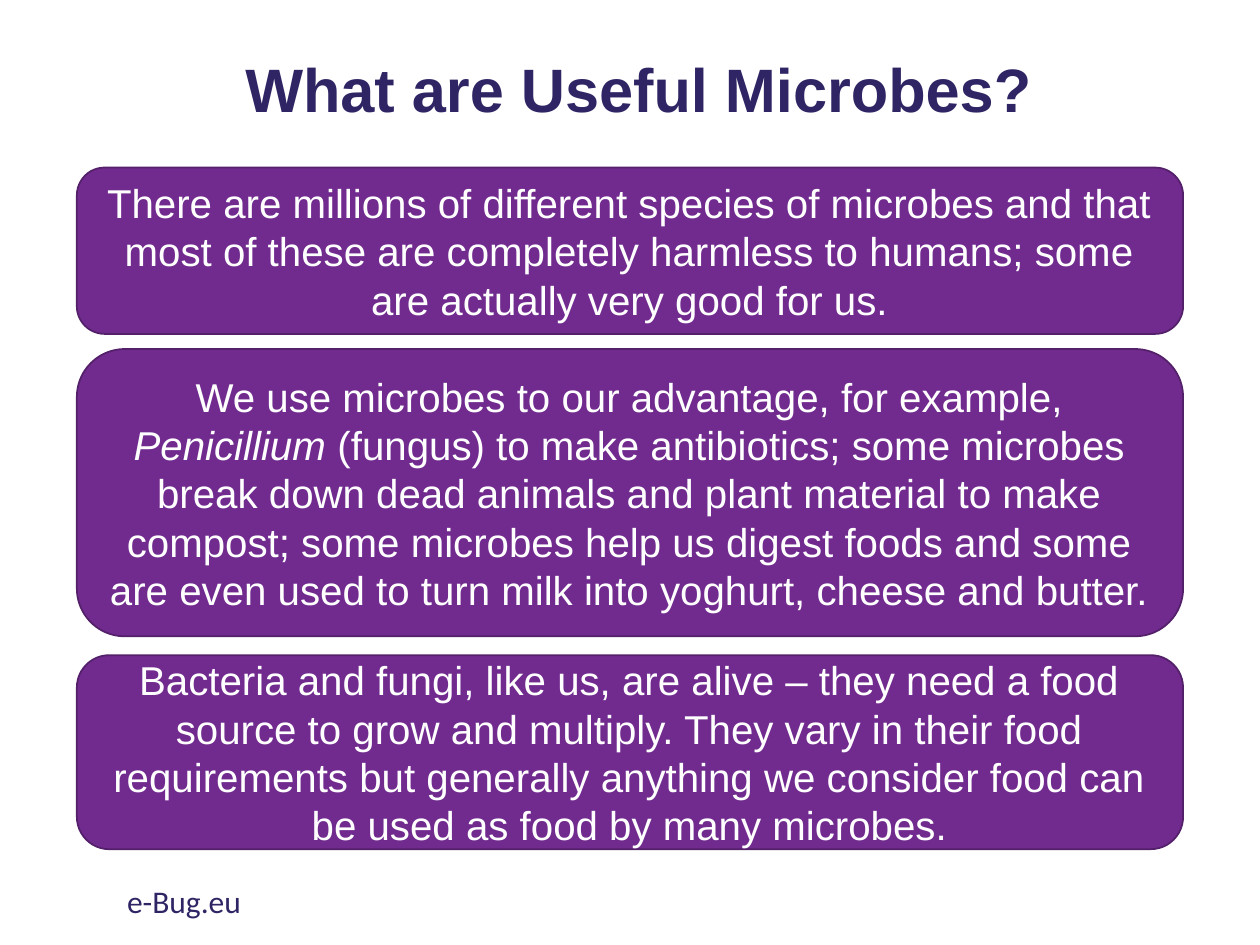
from pptx import Presentation
from pptx.dml.color import RGBColor
from pptx.enum.shapes import MSO_SHAPE
from pptx.enum.text import MSO_ANCHOR, PP_ALIGN
from pptx.util import Inches, Pt

NAVY, PURPLE, DARK_PURPLE, WHITE = "302564", "712B8F", "54206A", "FFFFFF"

TITLE = "What are Useful Microbes?"
WEB_ADDRESS = "e-Bug.eu"
PANEL_LEFT, PANEL_WIDTH = 0.61, 8.78
# top, height, runs of (text, italic)
PANELS = [
    (1.33, 1.32, [
        ("There are millions of different species of microbes and that most of "
         "these are completely harmless to humans; some are actually very good "
         "for us.", False),
    ]),
    (2.77, 2.28, [
        ("We use microbes to our advantage, for example, ", False),
        ("Penicillium", True),
        (" (fungus) to make antibiotics; some microbes break down dead animals "
         "and plant material to make compost; some microbes help us digest foods "
         "and some are even used to turn milk into yoghurt, cheese and butter.",
         False),
    ]),
    (5.2, 1.54, [
        ("Bacteria and fungi, like us, are alive – they need a food source to "
         "grow and multiply. They vary in their food requirements but generally "
         "anything we consider food can be used as food by many microbes.", False),
    ]),
]


def rgb(value):
    return RGBColor.from_string(value)


def write(shape, runs, size, color, font="Arial", bold=False,
          align=PP_ALIGN.CENTER, anchor=MSO_ANCHOR.MIDDLE, line_spacing=None):
    """Fill a shape with one paragraph made of (text, italic) runs."""
    frame = shape.text_frame
    frame.word_wrap = True
    frame.vertical_anchor = anchor
    paragraph = frame.paragraphs[0]
    paragraph.alignment = align
    paragraph.line_spacing = line_spacing
    for text, italic in runs:
        run = paragraph.add_run()
        run.text = text
        run.font.name = font
        run.font.size = Pt(size)
        run.font.bold = bold
        run.font.italic = italic
        run.font.color.rgb = rgb(color)


def add_panel(slide, top, height, runs):
    panel = slide.shapes.add_shape(
        MSO_SHAPE.ROUNDED_RECTANGLE, Inches(PANEL_LEFT), Inches(top),
        Inches(PANEL_WIDTH), Inches(height))
    panel.shadow.inherit = False
    panel.fill.solid()
    panel.fill.fore_color.rgb = rgb(PURPLE)
    panel.line.color.rgb = rgb(DARK_PURPLE)
    panel.line.width = Pt(1)
    write(panel, runs, 23, WHITE)


def main():
    presentation = Presentation()
    presentation.slide_width, presentation.slide_height = Inches(10), Inches(7.5)
    slide = presentation.slides.add_slide(presentation.slide_layouts[6])

    title = slide.shapes.add_textbox(
        Inches(0.76), Inches(0.28), Inches(8.62), Inches(0.91))
    write(title, [(TITLE, False)], 35, NAVY, bold=True, line_spacing=0.9)

    for top, height, runs in PANELS:
        add_panel(slide, top, height, runs)

    footer = slide.shapes.add_textbox(
        Inches(0.91), Inches(6.95), Inches(3.38), Inches(0.4))
    write(footer, [(WEB_ADDRESS, False)], 18, NAVY, font="Calibri",
          align=PP_ALIGN.LEFT, anchor=MSO_ANCHOR.TOP)

    presentation.save("out.pptx")


if __name__ == "__main__":
    main()
